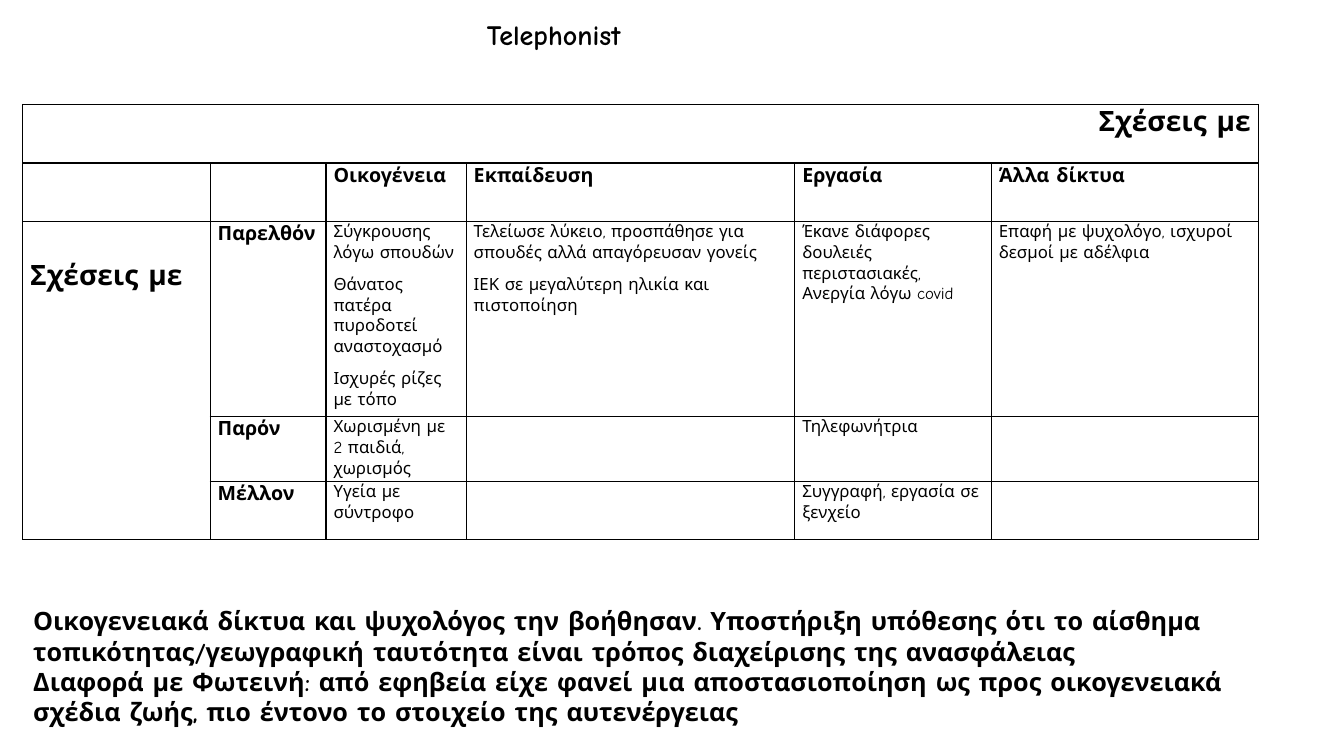
import pptx
import pptx.util
import pptx.dml.color
import pptx.enum.text
import pptx.oxml
import pptx.oxml.ns

Pt = pptx.util.Pt
BLACK = pptx.dml.color.RGBColor(0, 0, 0)
FONT = "Comic Neue"
ALIGN = pptx.enum.text.PP_ALIGN
TOP = pptx.enum.text.MSO_ANCHOR.TOP


def write(frame, lines, size, bold):
    frame.word_wrap = True
    for index, line in enumerate(lines):
        para = frame.paragraphs[0] if index == 0 else frame.add_paragraph()
        para.text = line
        para.alignment = ALIGN.LEFT
        para.line_spacing = 1.0
        para.font.name = FONT
        para.font.size = Pt(size)
        para.font.bold = bold
        para.font.color.rgb = BLACK


def add_borders(cell):
    properties = cell._tc.get_or_add_tcPr()
    for side in ("lnL", "lnR", "lnT", "lnB"):
        properties.append(pptx.oxml.parse_xml(
            f'<a:{side} {pptx.oxml.ns.nsdecls("a")} w="12700">'
            f'<a:solidFill><a:srgbClr val="{BLACK}"/></a:solidFill></a:{side}>'))


deck = pptx.Presentation()
deck.slide_width = Pt(960)
deck.slide_height = Pt(540)
page = deck.slides.add_slide(deck.slide_layouts[5])

title = page.shapes.title
title.left, title.top, title.width, title.height = Pt(340.6), Pt(8.6), Pt(153.4), Pt(31.7)
title.text_frame.vertical_anchor = TOP
title.text_frame.auto_size = pptx.enum.text.MSO_AUTO_SIZE.NONE
write(title.text_frame, ["Telephonist"], 20, True)

column_widths = [133.9, 82.8, 100.1, 234.7, 140.4, 190.8]
row_heights = [41.8, 41.8, 139.3, 46.4, 41.8]
relations = [
    [["Σχέσεις με"], [], [], [], [], []],
    [[], [], ["Οικογένεια"], ["Εκπαίδευση"], ["Εργασία"], ["Άλλα δίκτυα"]],
    [
        ["Σχέσεις με"],
        ["Παρελθόν"],
        ["Σύγκρουσης λόγω σπουδών", "Θάνατος πατέρα πυροδοτεί αναστοχασμό",
         "Ισχυρές ρίζες με τόπο"],
        ["Τελείωσε λύκειο, προσπάθησε για σπουδές αλλά απαγόρευσαν γονείς",
         "ΙΕΚ σε μεγαλύτερη ηλικία και πιστοποίηση"],
        ["Έκανε διάφορες δουλειές περιστασιακές, Ανεργία λόγω covid"],
        ["Επαφή με ψυχολόγο, ισχυροί δεσμοί με αδέλφια"],
    ],
    [[], ["Παρόν"], ["Χωρισμένη με 2 παιδιά, χωρισμός"], [], ["Τηλεφωνήτρια"], []],
    [[], ["Μέλλον"], ["Υγεία με σύντροφο"], [], ["Συγγραφή, εργασία σε ξενχείο"], []],
]

table = page.shapes.add_table(
    len(row_heights), len(column_widths), Pt(16.2), Pt(74.6),
    Pt(sum(column_widths)), Pt(sum(row_heights))).table
table.first_row = False
table.horz_banding = False
for column, width in zip(table.columns, column_widths):
    column.width = Pt(width)
for row, height in zip(table.rows, row_heights):
    row.height = Pt(height)

for row_index, row in enumerate(relations):
    for column_index, lines in enumerate(row):
        cell = table.cell(row_index, column_index)
        cell.margin_left = cell.margin_right = Pt(5.4)
        cell.margin_top = cell.margin_bottom = Pt(0)
        cell.vertical_anchor = TOP
        add_borders(cell)
        cell.fill.background()
        is_heading = row_index < 2 or column_index < 2
        size = 20 if row_index == 0 or column_index == 0 else 14 if is_heading else 12
        write(cell.text_frame, lines, size, is_heading)
        for para in cell.text_frame.paragraphs:
            para.line_spacing = 1.07
            para.space_after = Pt(8)

table.cell(0, 0).merge(table.cell(0, 5))
table.cell(0, 0).text_frame.paragraphs[0].alignment = ALIGN.RIGHT
table.cell(2, 0).merge(table.cell(4, 0))
table.cell(2, 0).margin_top = Pt(26)

summary = page.shapes.add_textbox(Pt(16.6), Pt(429.1), Pt(910), Pt(94.3))
write(summary.text_frame, [
    "Οικογενειακά δίκτυα και ψυχολόγος την βοήθησαν. Υποστήριξη υπόθεσης ότι το αίσθημα "
    "τοπικότητας/γεωγραφική ταυτότητα είναι τρόπος διαχείρισης της ανασφάλειας",
    "Διαφορά με Φωτεινή: από εφηβεία είχε φανεί μια αποστασιοποίηση ως προς οικογενειακά "
    "σχέδια ζωής, πιο έντονο το στοιχείο της αυτενέργειας",
], 18, True)

deck.save("out.pptx")
